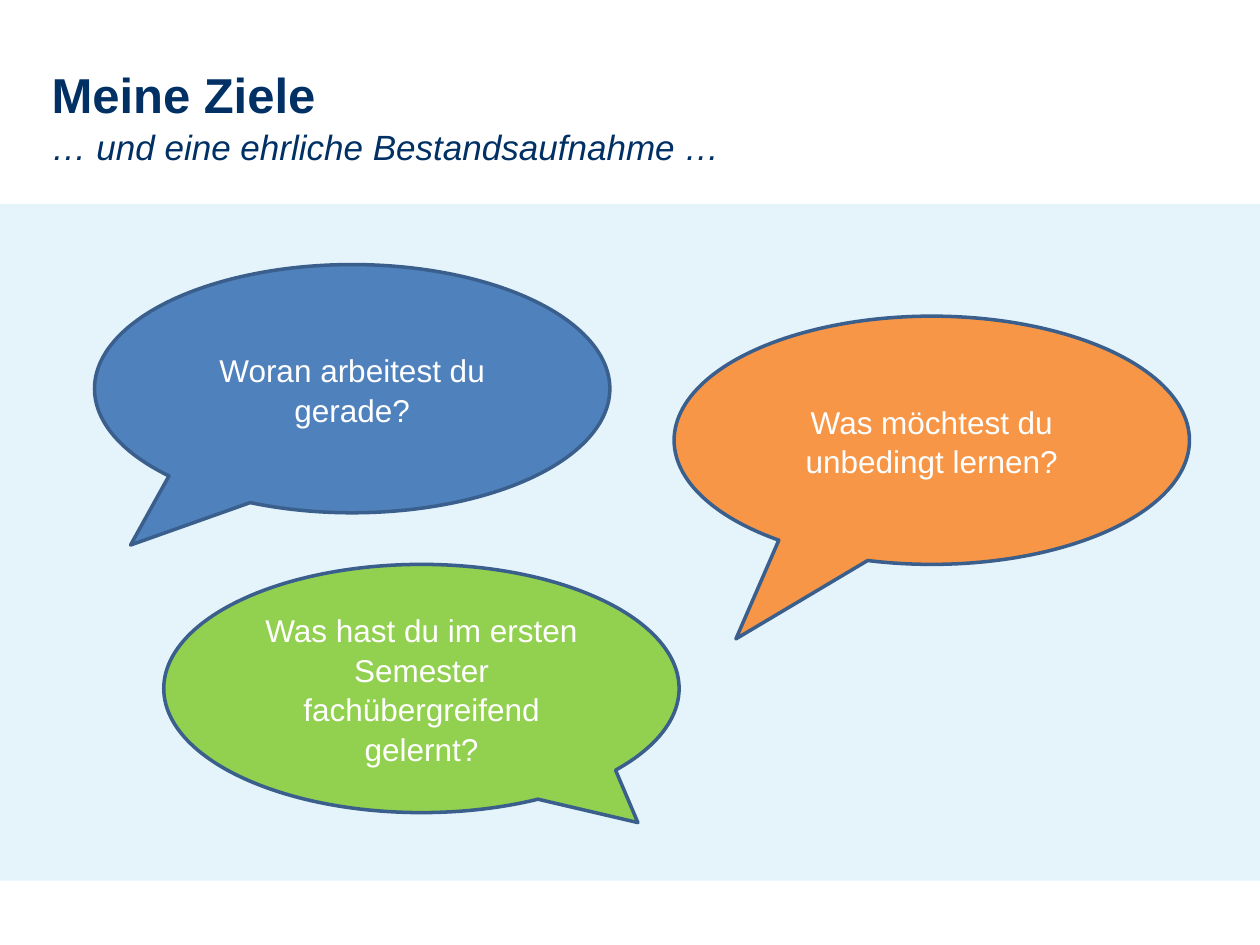
import pptx
import pptx.util
import pptx.dml.color
import pptx.enum.shapes
import pptx.enum.text
import lxml.etree
from pptx.oxml.ns import qn

Inches = pptx.util.Inches
Pt = pptx.util.Pt
SHAPES = pptx.enum.shapes.MSO_SHAPE
ALIGN = pptx.enum.text.PP_ALIGN
ANCHOR = pptx.enum.text.MSO_ANCHOR

COLORS = {
    "band": "008CCF", "title": "003064", "outline": "3A5F8C", "white": "FFFFFF",
    "blue": "4F81BD", "orange": "F79646", "green": "92D050",
}
BUBBLE_W, BUBBLE_H = 4.09, 1.97

# text, left, top, fill, pointer offset (x, y) from the centre
BUBBLES = [
    ("Woran arbeitest du gerade?", 0.75, 2.1, "blue", (-0.43, 0.63)),
    ("Was möchtest du unbedingt lernen?", 5.35, 2.51, "orange", (-0.38, 0.8)),
    ("Was hast du im ersten Semester fachübergreifend gelernt?",
     1.3, 4.48, "green", (0.42, 0.54)),
]


def rgb(name):
    return pptx.dml.color.RGBColor.from_string(COLORS[name])


def write(p, text, size=18, color="white", bold=False, italic=False, align=ALIGN.CENTER):
    p.alignment = align
    p.line_spacing = 1.05
    p.space_before = Pt(0)
    r = p.add_run()
    r.text = text
    r.font.name = "Arial"
    r.font.size = Pt(size)
    r.font.bold = bold
    r.font.italic = italic
    r.font.color.rgb = rgb(color)


def add_filled(slide, kind, left, top, width, height, color):
    sp = slide.shapes.add_shape(kind, Inches(left), Inches(top), Inches(width), Inches(height))
    sp.shadow.inherit = False
    sp.fill.solid()
    sp.fill.fore_color.rgb = rgb(color)
    return sp


def add_band(slide):
    sp = add_filled(slide, SHAPES.RECTANGLE, 0, 1.62, 10, 5.37, "band")
    sp.line.fill.background()
    # Ten percent opacity
    clr = sp._element.spPr.find(qn("a:solidFill")).find(qn("a:srgbClr"))
    lxml.etree.SubElement(clr, qn("a:alpha")).set("val", "10000")
    # Behind everything else
    slide.shapes._spTree.insert(2, sp._element)


def add_title(slide):
    sp = slide.shapes.title
    sp.left, sp.top, sp.width, sp.height = (Inches(v) for v in (0.31, 0.44, 6.06, 0.91))
    tf = sp.text_frame
    tf.word_wrap = True
    tf.auto_size = pptx.enum.text.MSO_AUTO_SIZE.SHAPE_TO_FIT_TEXT
    tf.vertical_anchor = ANCHOR.TOP
    write(tf.paragraphs[0], "Meine Ziele", size=28, color="title", bold=True, align=ALIGN.LEFT)
    write(tf.add_paragraph(), "… und eine ehrliche Bestandsaufnahme …",
          size=20, color="title", italic=True, align=ALIGN.LEFT)


def add_bubble(slide, text, left, top, color, pointer):
    sp = add_filled(slide, SHAPES.OVAL_CALLOUT, left, top, BUBBLE_W, BUBBLE_H, color)
    sp.adjustments[0], sp.adjustments[1] = pointer
    sp.line.color.rgb = rgb("outline")
    sp.line.width = Pt(2)
    tf = sp.text_frame
    tf.word_wrap = True
    tf.vertical_anchor = ANCHOR.MIDDLE
    write(tf.paragraphs[0], text)


def main():
    prs = pptx.Presentation()
    prs.slide_width, prs.slide_height = Inches(10), Inches(7.5)
    slide = prs.slides.add_slide(prs.slide_layouts[5])

    # Background band and heading
    add_band(slide)
    add_title(slide)

    # Question bubbles
    for bubble in BUBBLES:
        add_bubble(slide, *bubble)

    prs.save("out.pptx")


if __name__ == "__main__":
    main()
